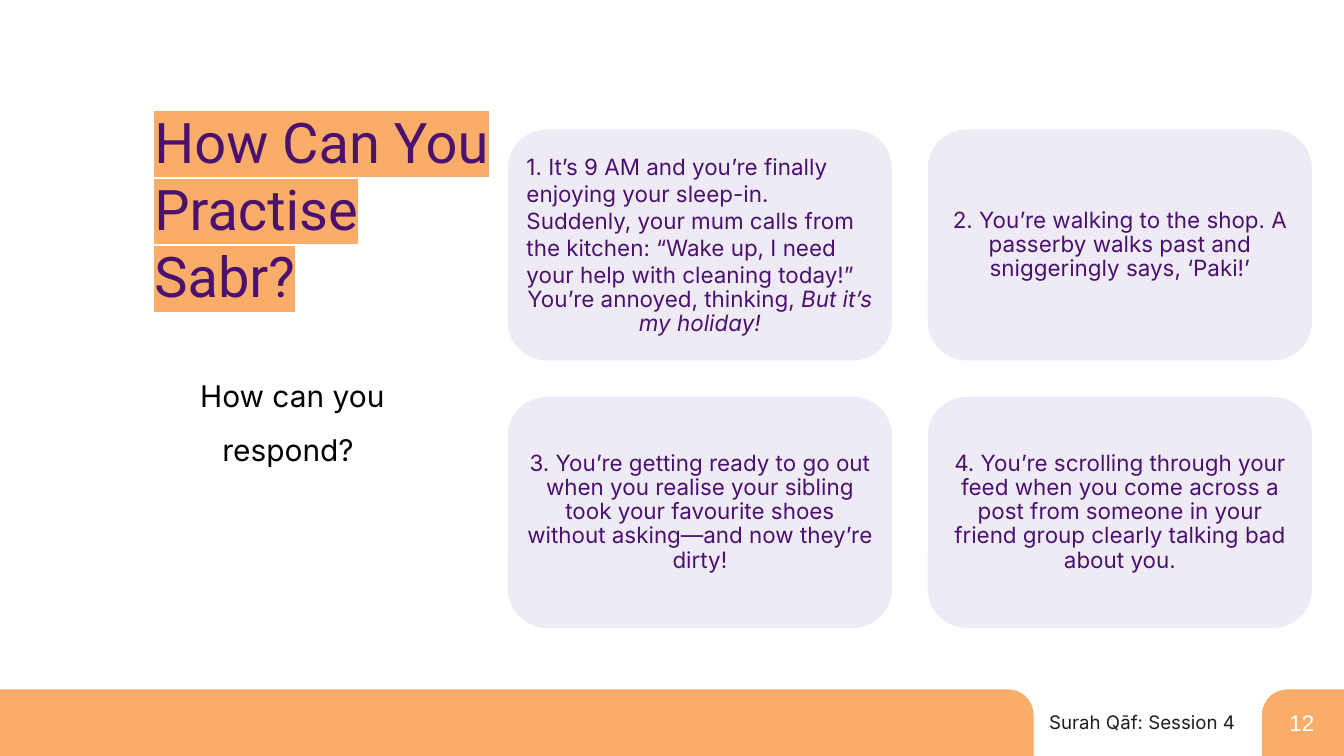
from dataclasses import dataclass

from lxml import etree
from pptx import Presentation
from pptx.dml.color import RGBColor
from pptx.enum.shapes import MSO_SHAPE
from pptx.enum.text import MSO_ANCHOR, PP_ALIGN
from pptx.oxml.ns import qn
from pptx.util import Pt

EMU_PER_PX = 9144  # 100 px to the inch
ROUND_RECT = MSO_SHAPE.ROUNDED_RECTANGLE
ROUND_CORNER = MSO_SHAPE.ROUND_1_RECTANGLE
LEFT, CENTER, RIGHT = PP_ALIGN.LEFT, PP_ALIGN.CENTER, PP_ALIGN.RIGHT
TOP, MIDDLE = MSO_ANCHOR.TOP, MSO_ANCHOR.MIDDLE


@dataclass(frozen=True)
class Theme:
    orange: str = "FAAC69"
    purple: str = "4B116F"
    lilac: str = "EEEBF5"
    white: str = "FFFFFF"
    black: str = "000000"
    ink: str = "1E1E1E"
    heading: str = "Roboto"
    body: str = "Inter"
    number: str = "Arial"
    title_size: int = 60
    prompt_size: int = 32
    card_size: int = 24
    footer_size: int = 20


THEME = Theme()

# Each card is a list of paragraphs: (alignment, line spacing, [(text, italic)])
CARDS = [
    [
        (LEFT, 1.0, [("1. It’s 9 AM and you’re finally enjoying your sleep-in. "
                      "Suddenly, your mum calls from the kitchen: “Wake up, "
                      "I need your help with cleaning today!”", False)]),
        (CENTER, 0.9, [("You’re annoyed, thinking, ", False),
                       ("But it’s my holiday!", True)]),
    ],
    [(CENTER, 0.9, [("2. You’re walking to the shop. A passerby walks past "
                     "and sniggeringly says, ‘Paki!’", False)])],
    [(CENTER, 0.9, [("3. You’re getting ready to go out when you realise your "
                     "sibling took your favourite shoes without asking—and "
                     "now they’re dirty!", False)])],
    [(CENTER, 0.9, [("4. You’re scrolling through your feed when you come "
                     "across a post from someone in your friend group "
                     "clearly talking bad about you.", False)])],
]


def px(*lengths):
    return [length * EMU_PER_PX for length in lengths]


def apply(target, values):
    for name, value in values.items():
        setattr(target, name, value)


def fill_frame(frame, paragraphs, size, color, font, anchor=TOP, inset=5,
               highlight=None):
    side, edge = px(10, inset)
    apply(frame, {"word_wrap": True, "vertical_anchor": anchor,
                  "margin_left": side, "margin_right": side,
                  "margin_top": edge, "margin_bottom": edge})
    for index, (align, spacing, spans) in enumerate(paragraphs):
        para = frame.add_paragraph() if index else frame.paragraphs[0]
        apply(para, {"alignment": align, "line_spacing": spacing})
        for text, italic in spans:
            span = para.add_run()
            span.text = text
            apply(span.font, {"size": Pt(size), "name": font,
                              "italic": italic})
            span.font.color.rgb = RGBColor.from_string(color)
            if highlight:
                mark = etree.Element(qn("a:highlight"))
                etree.SubElement(mark, qn("a:srgbClr"), val=highlight)
                span.font._element.find(qn("a:solidFill")).addnext(mark)


def add_text(page, place, paragraphs, **style):
    box = page.shapes.add_textbox(*px(*place))
    fill_frame(box.text_frame, paragraphs, **style)


def add_panel(page, kind, place, color):
    panel = page.shapes.add_shape(kind, *px(*place))
    panel.shadow.inherit = False
    panel.fill.solid()
    panel.fill.fore_color.rgb = RGBColor.from_string(color)
    panel.line.fill.background()
    return panel


def add_footer_bar(page, left, width, flipped=False):
    bar = add_panel(page, ROUND_CORNER, (left, 1026, width, 99), THEME.orange)
    bar.adjustments[0] = 0.38
    if flipped:
        bar._element.spPr.find(qn("a:xfrm")).set("flipH", "1")


def add_card(page, left, top, paragraphs):
    card = add_panel(page, ROUND_RECT, (left, top, 569, 341), THEME.lilac)
    card.line.color.rgb = RGBColor.from_string(THEME.lilac)
    card.line.width = Pt(2)
    fill_frame(card.text_frame, paragraphs, size=THEME.card_size,
               color=THEME.purple, font=THEME.body, anchor=MIDDLE, inset=10)


def main():
    deck = Presentation()
    deck.slide_width, deck.slide_height = px(2000, 1125)
    page = deck.slides.add_slide(deck.slide_layouts[6])

    # Footer
    add_footer_bar(page, 1878, 122, flipped=True)
    add_footer_bar(page, 0, 1538)
    add_text(page, (1487, 1053, 361, 44),
             [(RIGHT, 1.0, [("Surah Qāf: Session 4", False)])],
             size=THEME.footer_size, color=THEME.ink, font=THEME.body)
    add_text(page, (1909, 1050, 61, 50), [(LEFT, 1.0, [("12", False)])],
             size=THEME.card_size, color=THEME.white, font=THEME.number)

    # Title and prompt
    add_text(page, (220, 155, 537, 313),
             [(LEFT, 1.0, [("How Can You", False)]),
              (LEFT, 1.0, [("Practise Sabr?", False)])],
             size=THEME.title_size, color=THEME.purple, font=THEME.heading,
             highlight=THEME.orange)
    add_text(page, (244, 530, 382, 162),
             [(CENTER, 1.5, [("How can you respond? ", False)])],
             size=THEME.prompt_size, color=THEME.black, font=THEME.body)

    # Scenario cards, two by two
    for index, paragraphs in enumerate(CARDS):
        row, column = divmod(index, 2)
        add_card(page, 757 + 625 * column, 194 + 398 * row, paragraphs)

    deck.save("out.pptx")


if __name__ == "__main__":
    main()
